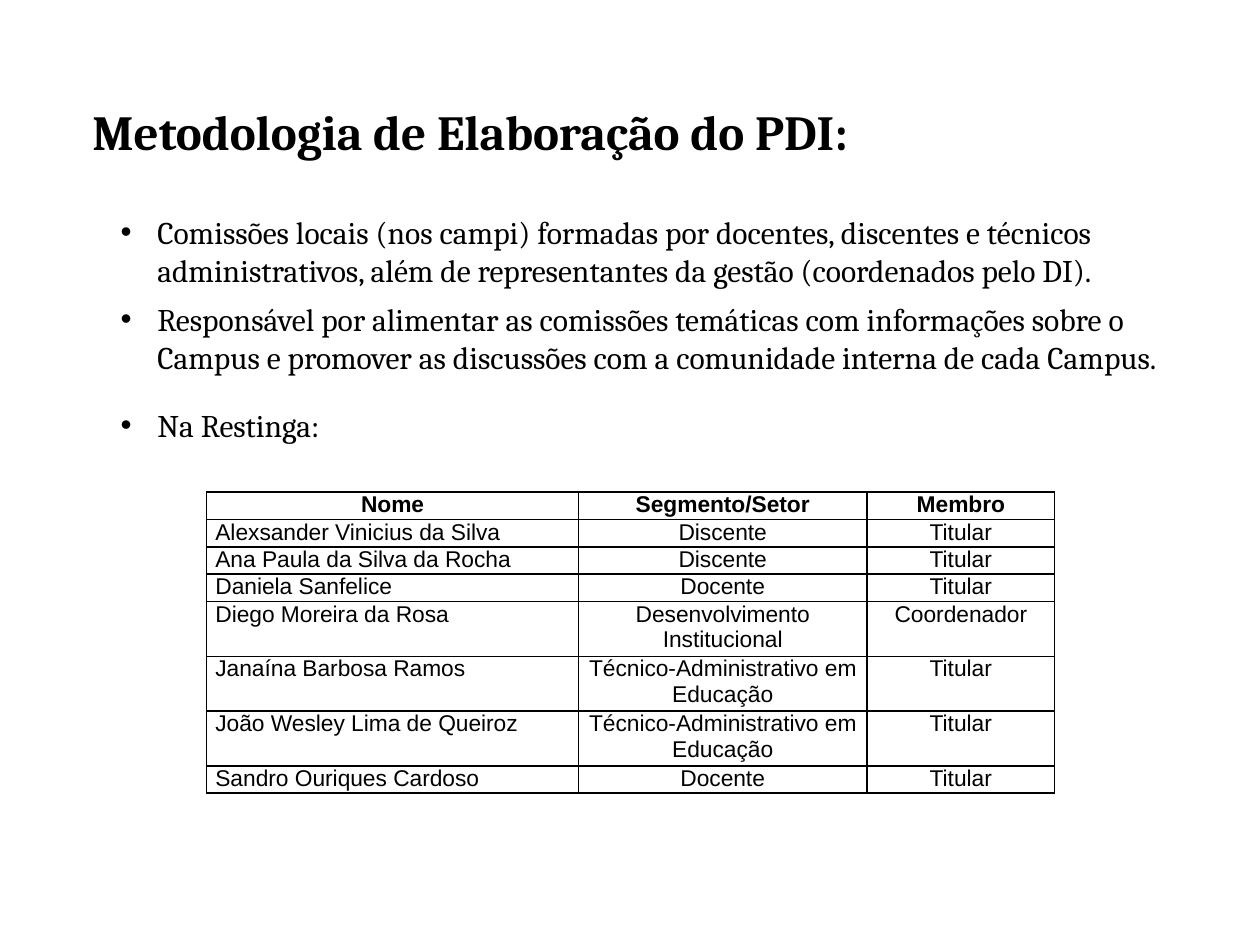
from lxml.etree import SubElement as Sub
from pptx import Presentation
from pptx.dml.color import RGBColor as RGB
from pptx.enum.text import PP_ALIGN as Align
from pptx.oxml.ns import qn
from pptx.util import Pt

COLORS = {"ink": "000000"}
TITLE = "Metodologia de Elaboração do PDI:"
POINTS = [
    "Comissões locais (nos campi) formadas por docentes, discentes e técnicos "
    "administrativos, além de representantes da gestão (coordenados pelo DI).",
    "Responsável por alimentar as comissões temáticas com informações sobre o "
    "Campus e promover as discussões com a comunidade interna de cada Campus.",
    "Na Restinga:",
]
STAFF = "Técnico-Administrativo em Educação"
ROWS = [
    ("Nome", "Segmento/Setor", "Membro"),
    ("Alexsander Vinicius da Silva", "Discente", "Titular"),
    ("Ana Paula da Silva da Rocha", "Discente", "Titular"),
    ("Daniela Sanfelice", "Docente", "Titular"),
    ("Diego Moreira da Rosa", "Desenvolvimento Institucional", "Coordenador"),
    ("Janaína Barbosa Ramos", STAFF, "Titular"),
    ("João Wesley Lima de Queiroz", STAFF, "Titular"),
    ("Sandro Ouriques Cardoso", "Docente", "Titular"),
]
WIDTHS = (212.4, 164.9, 107.3)
LINE = 15.6


def style(para, face, size, bold=False):
    """Set the font of every run in a paragraph."""
    for run in para.runs:
        font = run.font
        font.name, font.size, font.bold = face, Pt(size), bold
        font.color.rgb = RGB.from_string(COLORS["ink"])


def add_box(slide, left, top, width, height):
    """Add a wrapping text box and return its text frame."""
    box = slide.shapes.add_textbox(Pt(left), Pt(top), Pt(width), Pt(height))
    box.text_frame.word_wrap = True
    return box.text_frame


def add_title(slide):
    """Add the slide heading."""
    frame = add_box(slide, 39.6, 54.7, 511.9, 72.7)
    frame.margin_left = Pt(13.2)
    frame.text = TITLE
    style(frame.paragraphs[0], "Cambria", 28, True)


def add_list(slide):
    """Add the bulleted points."""
    frame = add_box(slide, 48.2, 118.1, 629.3, 373)
    frame.text = "\n".join(POINTS)
    for row, para in enumerate(frame.paragraphs):
        props = para._p.get_or_add_pPr()
        props.set("marL", str(Pt(34.6)))
        props.set("indent", str(Pt(-20.9)))
        Sub(props, qn("a:buFont"), typeface="Arial")
        Sub(props, qn("a:buChar"), char="•")
        para.space_before = Pt(6.5 if row else 0)
        style(para, "Cambria", 18)
    frame.paragraphs[-1].line_spacing = 1.5


def add_edges(cell):
    """Draw a thin line on all four sides of a cell."""
    props = cell._tc.get_or_add_tcPr()
    for place, side in enumerate(("a:lnL", "a:lnR", "a:lnT", "a:lnB")):
        edge = props.makeelement(qn(side), {"w": str(Pt(1))})
        fill = Sub(edge, qn("a:solidFill"))
        Sub(fill, qn("a:srgbClr"), val=COLORS["ink"])
        props.insert(place, edge)


def fill_cell(cell, text, align, bold):
    """Write and format one table cell."""
    cell.fill.background()
    cell.margin_left = cell.margin_right = Pt(5)
    cell.margin_top = cell.margin_bottom = Pt(0)
    cell.text = text
    para = cell.text_frame.paragraphs[0]
    para.alignment = align
    style(para, "Arial", 13, bold)
    add_edges(cell)


def add_grid(slide):
    """Add the table of committee members."""
    lines = [2 if len(row[1]) > 25 else 1 for row in ROWS]
    shape = slide.shapes.add_table(
        len(ROWS), len(WIDTHS), Pt(118.1), Pt(281.2),
        Pt(sum(WIDTHS)), Pt(LINE * sum(lines)))
    table = shape.table
    table.first_row = table.horz_banding = False
    for col, width in zip(table.columns, WIDTHS):
        col.width = Pt(width)
    for r, row in enumerate(ROWS):
        table.rows[r].height = Pt(LINE * lines[r])
        for c, text in enumerate(row):
            name = r > 0 and c == 0
            align = Align.JUSTIFY if name else Align.CENTER
            fill_cell(table.cell(r, c), text, align, r == 0)


def main():
    """Build and save the slide."""
    deck = Presentation()
    deck.slide_width, deck.slide_height = Pt(720), Pt(540)
    slide = deck.slides.add_slide(deck.slide_layouts[6])
    add_title(slide)
    add_list(slide)
    add_grid(slide)
    deck.save("out.pptx")


if __name__ == "__main__":
    main()
